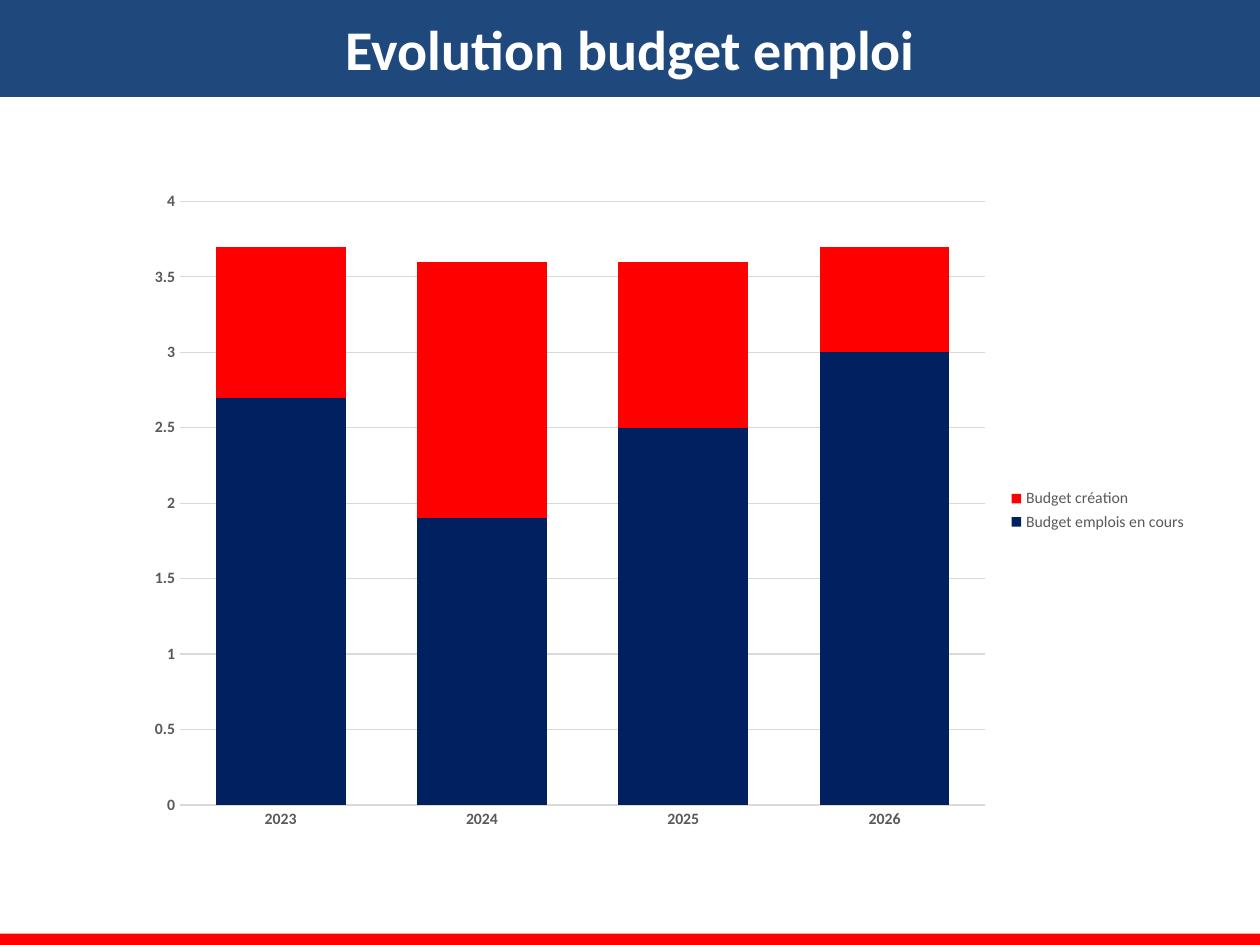
from pptx import Presentation
from pptx.chart.data import CategoryChartData
from pptx.dml.color import RGBColor
from pptx.enum.chart import XL_CHART_TYPE, XL_LEGEND_POSITION, XL_TICK_MARK
from pptx.enum.shapes import MSO_SHAPE
from pptx.enum.text import MSO_ANCHOR, MSO_AUTO_SIZE, PP_ALIGN
from pptx.util import Inches, Pt
from dataclasses import dataclass

STACKED = XL_CHART_TYPE.COLUMN_STACKED
RIGHT = XL_LEGEND_POSITION.RIGHT
NO_TICK = XL_TICK_MARK.NONE
RECT = MSO_SHAPE.RECTANGLE
MIDDLE = MSO_ANCHOR.MIDDLE
NO_FIT = MSO_AUTO_SIZE.NONE
CENTER = PP_ALIGN.CENTER


@dataclass(frozen=True)
class Theme:
    face: str = "Calibri"
    white: RGBColor = RGBColor(0xFF, 0xFF, 0xFF)
    blue: RGBColor = RGBColor(0x1F, 0x49, 0x7D)
    navy: RGBColor = RGBColor(0x00, 0x20, 0x60)
    red: RGBColor = RGBColor(0xFF, 0x00, 0x00)
    gray: RGBColor = RGBColor(0x59, 0x59, 0x59)
    grid: RGBColor = RGBColor(0xD9, 0xD9, 0xD9)
    black: RGBColor = RGBColor(0x00, 0x00, 0x00)
    head: int = 32
    base: int = 10
    small: int = 9


theme = Theme()


def style(font, size, color, bold=False):
    font.name = theme.face
    font.size = Pt(size)
    font.bold = bold
    font.color.rgb = color


deck = Presentation()
deck.slide_width = Inches(10)
deck.slide_height = Inches(7.5)
slide = deck.slides.add_slide(deck.slide_layouts[5])

title = slide.shapes.title
title.left, title.top = Inches(0), Inches(0)
title.width, title.height = Inches(10.01), Inches(0.77)
title.fill.solid()
title.fill.fore_color.rgb = theme.blue
frame = title.text_frame
frame.text = "Evolution budget emploi"
frame.auto_size = NO_FIT
frame.vertical_anchor = MIDDLE
line = frame.paragraphs[0]
line.alignment = CENTER
style(line.runs[0].font, theme.head, theme.white, True)

footer = slide.shapes.add_shape(RECT, Inches(0), Inches(7.41), Inches(10), Inches(0.1))
footer.shadow.inherit = False
footer.fill.solid()
footer.fill.fore_color.rgb = theme.red
footer.line.fill.background()

budget = [
    ("Budget emplois en cours", (2.7, 1.9, 2.5, 3), theme.navy),
    ("Budget création", (1, 1.7, 1.1, 0.7), theme.red),
]
data = CategoryChartData()
data.categories = ["2023", "2024", "2025", "2026"]
for name, values, color in budget:
    data.add_series(name, values)

chart = slide.shapes.add_chart(
    STACKED, Inches(1.06), Inches(1.42), Inches(8.46), Inches(5.26), data
).chart
style(chart.font, theme.base, theme.black)
chart.has_title = False

plot = chart.plots[0]
plot.gap_width = 55
plot.overlap = 100
plot.vary_by_categories = False
for series, (name, values, color) in zip(plot.series, budget):
    series.format.fill.solid()
    series.format.fill.fore_color.rgb = color

for axis in (chart.category_axis, chart.value_axis):
    axis.major_tick_mark = NO_TICK
    axis.minor_tick_mark = NO_TICK
    axis.format.line.fill.background()
    style(axis.tick_labels.font, theme.small, theme.gray, True)

scale = chart.value_axis
scale.minimum_scale = 0
scale.maximum_scale = 4
scale.major_unit = 0.5
scale.has_major_gridlines = True
grid = scale.major_gridlines.format.line
grid.color.rgb = theme.grid
grid.width = Pt(0.75)

chart.has_legend = True
chart.legend.position = RIGHT
chart.legend.include_in_layout = False
style(chart.legend.font, theme.small, theme.gray)

deck.save("out.pptx")
